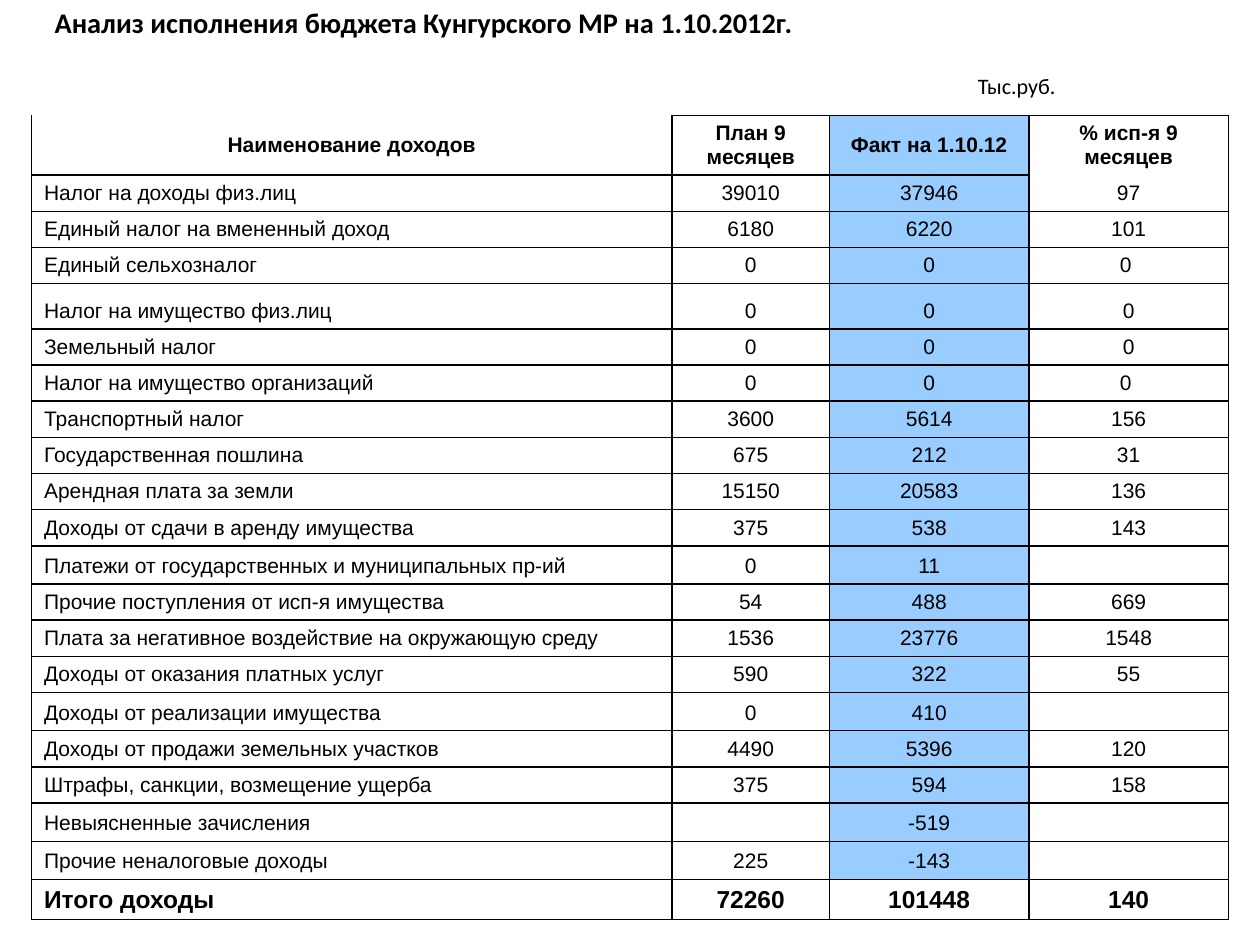
from dataclasses import dataclass

from lxml.etree import SubElement
from pptx import Presentation
from pptx.dml.color import RGBColor
from pptx.enum.text import MSO_ANCHOR, MSO_AUTO_SIZE, PP_ALIGN
from pptx.oxml.ns import qn
from pptx.util import Pt


@dataclass(frozen=True)
class Theme:
    """Colours, fonts and type sizes of the slide."""
    ink: str = "000000"
    accent: str = "99CCFF"
    title_font: str = "Calibri"
    table_font: str = "Arial"
    title: float = 16.2
    unit: float = 12.6
    body: float = 12
    total: float = 14
    line: float = 1


THEME = Theme()
TITLE = "Анализ исполнения бюджета Кунгурского МР на 1.10.2012г."
UNIT = "Тыс.руб."
COL_WIDTHS = (366, 90, 114, 114)
ROW_HEIGHT, TALL_ROW, HEADER_HEIGHT, TOTAL_HEIGHT = 20.6, 25.8, 34, 22.9
FACT_COL, PERCENT_COL, PROPERTY_TAX_ROW = 2, 3, 4
ROWS = (
    ("Наименование доходов", "План 9 месяцев", "Факт на 1.10.12", "% исп-я 9 месяцев"),
    ("Налог на доходы физ.лиц", "39010", "37946", "97"),
    ("Единый налог на вмененный доход", "6180", "6220", "101"),
    ("Единый сельхозналог", "0", "0", "0 "),
    ("Налог на имущество физ.лиц", "0", "0", "0"),
    ("Земельный налог", "0", "0", "0"),
    ("Налог на имущество организаций", "0", "0", "0 "),
    ("Транспортный налог", "3600", "5614", "156"),
    ("Государственная пошлина", "675", "212", "31"),
    ("Арендная плата за земли", "15150", "20583", "136"),
    ("Доходы от сдачи в аренду имущества", "375", "538", "143"),
    ("Платежи от государственных и муниципальных пр-ий", "0", "11", ""),
    ("Прочие поступления от исп-я имущества", "54", "488", "669"),
    ("Плата за негативное воздействие на окружающую среду", "1536", "23776", "1548"),
    ("Доходы от оказания платных услуг", "590", "322", "55"),
    ("Доходы от реализации имущества", "0", "410", ""),
    ("Доходы от продажи земельных участков", "4490", "5396", "120"),
    ("Штрафы, санкции, возмещение ущерба", "375", "594", "158"),
    ("Невыясненные зачисления", "", "-519", ""),
    ("Прочие неналоговые доходы", "225", "-143", ""),
    ("Итого доходы", "72260", "101448", "140"),
)
LAST = len(ROWS) - 1
OPEN_EDGES = {(0, 0): "T", (0, PERCENT_COL): "B", (1, PERCENT_COL): "T"}


def style_paragraph(p, font, size, bold, align):
    """Align a paragraph and format its runs."""
    p.alignment = align
    for r in p.runs:
        r.font.name = font
        r.font.size = Pt(size)
        r.font.bold = bold
        r.font.color.rgb = RGBColor.from_string(THEME.ink)


def set_borders(cell, open_edge):
    """Rule the four edges of a cell, leaving the open one blank."""
    tc_pr = cell._tc.get_or_add_tcPr()
    for edge in "LRTB":
        ln = SubElement(tc_pr, qn(f"a:ln{edge}"), w=str(Pt(THEME.line)))
        if edge == open_edge:
            SubElement(ln, qn("a:noFill"))
        else:
            fill = SubElement(ln, qn("a:solidFill"))
            SubElement(fill, qn("a:srgbClr"), val=THEME.ink)


def add_heading(s, x, y, w, h):
    """Place the title with the unit of measure beneath it."""
    sp = s.shapes.title
    sp.left, sp.top, sp.width, sp.height = Pt(x), Pt(y), Pt(w), Pt(h)
    tf = sp.text_frame
    tf.word_wrap = True
    tf.auto_size = MSO_AUTO_SIZE.NONE
    tf.vertical_anchor = MSO_ANCHOR.MIDDLE
    tf.text = f"{TITLE}\n{UNIT}"
    heading, unit = tf.paragraphs
    style_paragraph(heading, THEME.title_font, THEME.title, True, PP_ALIGN.LEFT)
    style_paragraph(unit, THEME.title_font, THEME.unit, False, PP_ALIGN.LEFT)
    unit.space_before = Pt(19)
    unit._p.get_or_add_pPr().set("marL", str(Pt(w - 150.4)))


def fill_cell(cell, row, col, text):
    """Write and format one cell by its place in the table."""
    header, total = row == 0, row == LAST
    size = THEME.total if total else THEME.body
    left = col == 0 and not header
    set_borders(cell, OPEN_EDGES.get((row, col)))
    if col == FACT_COL and not total:
        cell.fill.solid()
        cell.fill.fore_color.rgb = RGBColor.from_string(THEME.accent)
    else:
        cell.fill.background()
    cell.vertical_anchor = MSO_ANCHOR.MIDDLE if header or total else MSO_ANCHOR.BOTTOM
    cell.text_frame.text = text
    p = cell.text_frame.paragraphs[0]
    style_paragraph(p, THEME.table_font, size, header or total,
                    PP_ALIGN.LEFT if left else PP_ALIGN.CENTER)
    if not text:
        SubElement(p._p, qn("a:endParaRPr"), sz=str(int(size * 100)))


def add_income_table(s, x, y, w):
    """Place the table of planned and actual income."""
    heights = [ROW_HEIGHT] * len(ROWS)
    heights[0], heights[PROPERTY_TAX_ROW], heights[LAST] = HEADER_HEIGHT, TALL_ROW, TOTAL_HEIGHT
    table = s.shapes.add_table(len(ROWS), len(COL_WIDTHS), Pt(x), Pt(y),
                               Pt(w), Pt(sum(heights))).table
    table.first_row = table.horz_banding = False
    for column, width in zip(table.columns, COL_WIDTHS):
        column.width = Pt(w * width / sum(COL_WIDTHS))
    for row, (values, height) in enumerate(zip(ROWS, heights)):
        table.rows[row].height = Pt(height)
        for col, text in enumerate(values):
            fill_cell(table.cell(row, col), row, col, text)


def main():
    """Build the budget slide and save it."""
    prs = Presentation()
    prs.slide_width, prs.slide_height = Pt(720), Pt(540)
    s = prs.slides.add_slide(prs.slide_layouts[5])
    add_heading(s, 24, 18, 678, 24)
    add_income_table(s, 18, 66, 684)
    prs.save("out.pptx")


if __name__ == "__main__":
    main()
